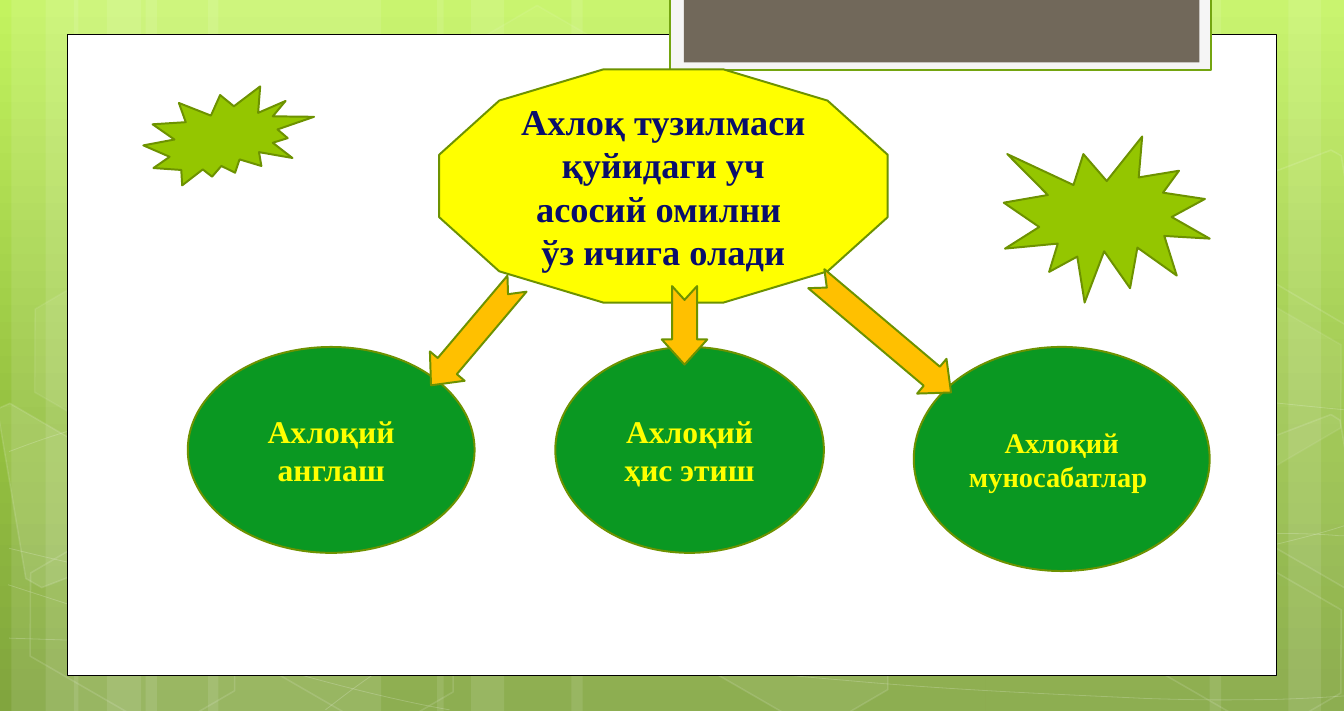
from math import cos, radians, sin

from lxml.etree import SubElement
from pptx import Presentation
from pptx.dml.color import RGBColor
from pptx.enum.shapes import MSO_SHAPE as Shp
from pptx.enum.text import MSO_ANCHOR, MSO_AUTO_SIZE, PP_ALIGN
from pptx.oxml import parse_xml
from pptx.oxml.ns import nsdecls, qn
from pptx.util import Inches, Pt

W, H = 11.81, 6.25
FONT = "Times New Roman"
WHITE, OLIVE, GREEN, ORANGE, LIME = "FFFFFF", "6D9200", "0A9822", "FFC000", "94C600"

# Content
TITLE = ["Ахлоқ тузилмаси қуйидаги уч асосий омилни ", "ўз ичига олади"]
TITLE_BOX = (3.86, 0.61, 3.94, 2.05)
INSET = 0.134  # share of the dodecagon kept clear of text on each side
FACTORS = [  # text, left, width, height, size
    ("Ахлоқий англаш", 1.65, 2.52, 1.81, 20),
    ("Ахлоқий ҳис этиш", 4.88, 2.36, 1.81, 20),
    ("Ахлоқий муносабатлар ", 8.03, 2.6, 1.97, 18),
]
FACTOR_TOP = 3.05
ARROWS = [  # left, top, length, rotation
    (3.58, 2.74, 1.17, 130.2),
    (5.67, 2.66, 0.69, 90),
    (6.99, 2.75, 1.55, 40.2),
]
BURSTS = [
    (Shp.EXPLOSION2, (1.26, 0.76, 1.5, 0.87)),
    (Shp.EXPLOSION1, (8.82, 1.2, 1.81, 1.46)),
]

# Backdrop
SKY = [(0, "C3F35F"), (62, "93BF3F"), (100, "81A53E")]
BARS = [  # left, width
    (1.28, 2.07), (0.1, 0.59), (0.4, 0.98), (1.83, 2.07), (0.65, 0.59), (0.94, 0.98),
    (8.66, 2.07), (11.32, 0.59), (10.63, 0.98), (5.02, 3.64), (3.84, 0.59), (4.14, 0.98),
]
CURVES = [  # start point, then two control points and an end point per segment
    [(0.08, 5.61), (0.72, 5.63), (1.36, 5.66), (2.25, 5.65), (3.14, 5.64), (4.22, 5.63),
     (5.41, 5.54), (6.59, 5.46), (8.27, 5.3), (9.35, 5.14), (10.43, 4.98), (11.54, 4.73),
     (11.9, 4.59)],
    [(0.08, 3.97), (0.42, 3.84), (0.77, 3.72), (1.43, 3.59), (2.1, 3.47), (3.06, 3.29),
     (4.1, 3.23), (5.15, 3.16), (6.43, 3.16), (7.72, 3.23), (9.02, 3.29), (11.19, 3.55),
     (11.9, 3.61)],
    [(0.07, 5.14), (1.49, 5.6), (2.92, 6.06), (3.95, 6.24)],
    [(0.08, 4.82), (0.45, 4.91), (0.82, 5), (1.51, 5.13), (2.2, 5.26), (3.23, 5.46),
     (4.21, 5.61), (5.2, 5.75), (6.44, 5.9), (7.42, 5.98), (8.39, 6.07), (9.45, 6.11),
     (10.07, 6.14), (10.7, 6.16), (10.86, 6.15), (11.16, 6.15), (11.47, 6.14),
     (11.68, 6.13), (11.9, 6.11)],
    [(2.86, 6.24), (3.07, 6.08), (3.28, 5.91), (3.57, 5.76), (3.85, 5.6), (4.25, 5.44),
     (4.58, 5.32), (4.91, 5.21), (5.11, 5.16), (5.55, 5.08), (5.98, 4.99), (6.77, 4.87),
     (7.19, 4.82), (7.6, 4.76), (7.67, 4.76), (8.03, 4.74), (8.4, 4.72), (8.97, 4.7),
     (9.38, 4.69), (9.79, 4.68), (10.47, 4.69), (10.47, 4.69), (10.73, 4.69),
     (10.99, 4.69), (11.25, 4.69), (11.47, 4.69), (11.67, 4.7), (11.77, 4.71),
     (11.88, 4.71), (11.84, 4.71), (11.88, 4.72)],
]
TILT = 30
HEXAGONS = [  # left, top, fill opacity, line opacity
    (3.95, 0.3, 4, 8), (5.87, 4.91, 6, 12), (0.13, 4.92, 0, 12), (0.17, 2.6, 7, 8),
    (2.05, 4.93, 0, 12), (9.85, 4.94, 0, 12), (9.85, 2.61, 7, 8),
]
CUT_HEXAGONS = [  # tilted outline, centre of tilt, fill opacity
    ([(-0.02, 3.59), (0.09, 3.54), (1, 4.07), (1.13, 4.87), (0.37, 5.16), (0.23, 5.08)],
     (0.43, 4.47), 10),
    ([(10.94, 3.93), (11.7, 3.64), (11.78, 3.69), (12.04, 5.23), (11.97, 5.25),
      (11.07, 4.73)], (11.64, 4.34), 4),
    ([(10.94, 1.61), (11.7, 1.32), (11.79, 1.37), (12.04, 2.91), (11.97, 2.94),
      (11.07, 2.41)], (11.63, 2.02), 0),
]

prs = Presentation()
prs.slide_width, prs.slide_height = Inches(W), Inches(H)
s = prs.slides.add_slide(prs.slide_layouts[5])


def color(fill, value, opacity=100):
    """Fill with a hex colour at a given opacity, or with nothing."""
    if not value or not opacity:
        fill.background()
        return
    fill.solid()
    fill.fore_color.rgb = RGBColor.from_string(value)
    if opacity < 100:
        clr = fill._xPr.find(qn("a:solidFill"))[0]
        SubElement(clr, qn("a:alpha"), val=str(opacity * 1000))


def paint(sp, fill=None, line=None, width=1.25, fill_opacity=100, line_opacity=100):
    color(sp.fill, fill, fill_opacity)
    color(sp.line.fill, line, line_opacity)
    if line:
        sp.line.width = Pt(width)
    sp.shadow.inherit = False


def add(kind, box, rotation=0, **look):
    sp = s.shapes.add_shape(kind, *map(Inches, box))
    sp.rotation = rotation
    paint(sp, **look)
    return sp


def outline(points, close, **look):
    pts = [(Inches(x), Inches(y)) for x, y in points]
    builder = s.shapes.build_freeform(*pts[0])
    builder.add_line_segments(pts[1:], close=close)
    sp = builder.convert_to_shape()
    paint(sp, **look)
    return sp


def bend(sp):
    """Turn each three straight steps of an outline into one cubic curve."""
    steps = list(sp.element.iter(qn("a:lnTo")))
    for i in range(0, len(steps), 3):
        curve = SubElement(steps[i].getparent(), qn("a:cubicBezTo"))
        for step in steps[i:i + 3]:
            curve.append(step[0])
            step.getparent().remove(step)


def untilt(points, centre):
    a, (cx, cy) = radians(TILT), centre
    return [(cx + (x - cx) * cos(a) + (y - cy) * sin(a),
             cy - (x - cx) * sin(a) + (y - cy) * cos(a)) for x, y in points]


def write(sp, lines, size, ink):
    tf = sp.text_frame
    tf.word_wrap = True
    tf.auto_size = MSO_AUTO_SIZE.NONE
    tf.vertical_anchor = MSO_ANCHOR.MIDDLE
    tf.text = "\n".join(lines)
    for p in tf.paragraphs:
        p.alignment = PP_ALIGN.CENTER
        p.font.name, p.font.size, p.font.bold = FONT, Pt(size), True
        color(p.font.fill, ink)


# Background gradient
s.background.fill.gradient()
grad = s.background.fill._xPr.find(qn("a:gradFill"))
stops = "".join(f'<a:gs pos="{pos * 1000}"><a:srgbClr val="{c}"/></a:gs>' for pos, c in SKY)
grad.getparent().replace(grad, parse_xml(
    f'<a:gradFill {nsdecls("a")} rotWithShape="1"><a:gsLst>{stops}</a:gsLst>'
    '<a:lin ang="5400000" scaled="0"/></a:gradFill>'))

# Translucent bars, curves and hexagons
for left, width in BARS:
    add(Shp.RECTANGLE, (left, 0, width, H), fill=WHITE, fill_opacity=10)
for nodes in CURVES:
    bend(outline(nodes, False, line=WHITE, width=0.5, line_opacity=20))
for left, top, fill_opacity, line_opacity in HEXAGONS:
    sp = add(Shp.HEXAGON, (left, top, 2.07, 1.27), TILT, fill=WHITE, line=WHITE, width=1,
             fill_opacity=fill_opacity, line_opacity=line_opacity)
    sp.adjustments[0] = 0.285
for points, centre, fill_opacity in CUT_HEXAGONS:
    sp = outline(untilt(points, centre), True, fill=WHITE, line=WHITE, width=1,
                 fill_opacity=fill_opacity, line_opacity=12)
    sp.rotation = TILT

# White page and top tab
add(Shp.RECTANGLE, (0.59, 0.3, 10.63, 5.64), fill=WHITE, line="000000", width=0.5)
add(Shp.RECTANGLE, (5.89, -0.02, 4.75, 0.64), fill="F5F5F5", line="74A510")
add(Shp.RECTANGLE, (6.01, -0.02, 4.53, 0.57), fill="71685A")

# Title inside a dodecagon
add(Shp.DODECAGON, TITLE_BOX, fill="FFFF00", line=OLIVE)
left, top, width, height = TITLE_BOX
title = s.shapes.title
title.left, title.top = Inches(left + INSET * width), Inches(top + INSET * height)
title.width, title.height = (Inches(side * (1 - 2 * INSET)) for side in (width, height))
write(title, TITLE, 23, "090E6B")
title.element.getparent().append(title.element)

# Three factors with arrows
for text, left, width, height, size in FACTORS:
    sp = add(Shp.FLOWCHART_CONNECTOR, (left, FACTOR_TOP, width, height), fill=GREEN, line=OLIVE)
    write(sp, [text], size, "FFFF00")
for left, top, length, rotation in ARROWS:
    sp = add(Shp.NOTCHED_RIGHT_ARROW, (left, top, length, 0.4), rotation,
             fill=ORANGE, line=OLIVE)
    sp.adjustments[0], sp.adjustments[1] = 0.549, 0.553

# Bursts
for kind, box in BURSTS:
    add(kind, box, fill=LIME, line=OLIVE)

prs.save("out.pptx")
